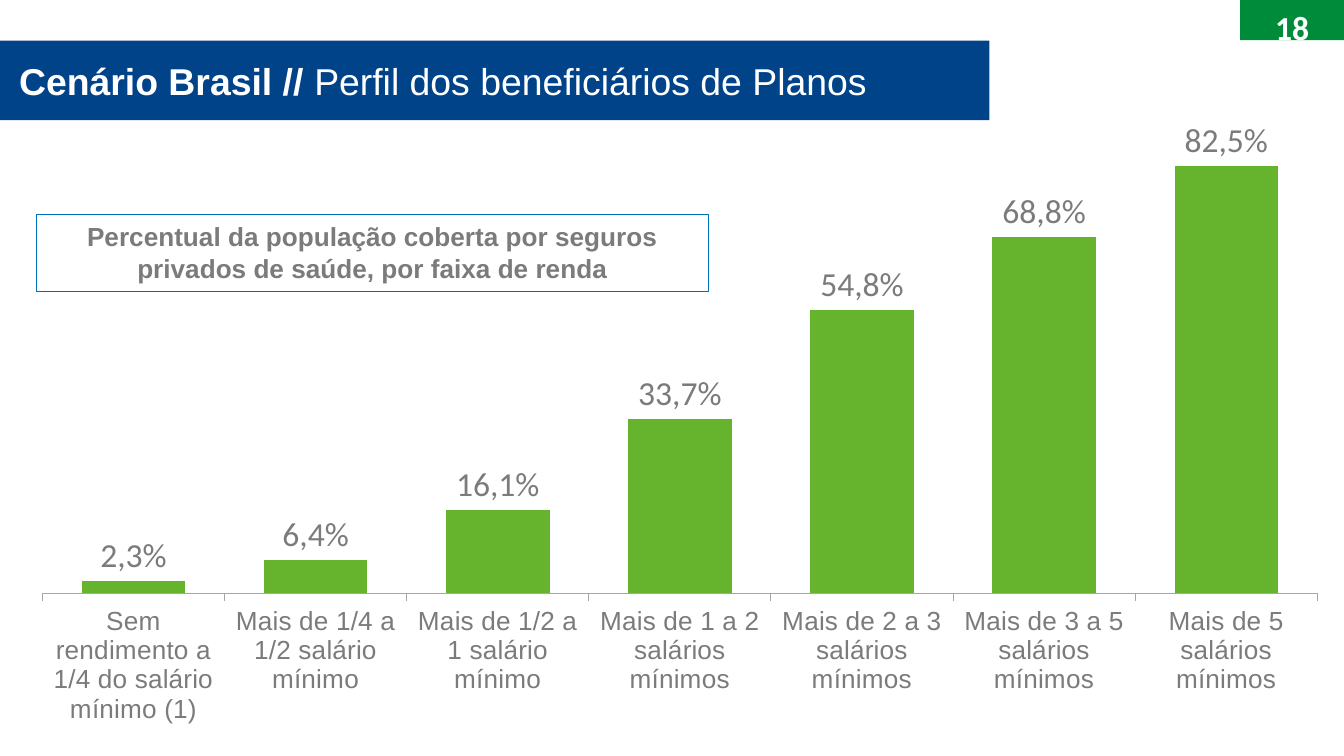
from pptx import Presentation
from pptx.chart.data import CategoryChartData
from pptx.dml.color import RGBColor
from pptx.enum.chart import XL_CHART_TYPE, XL_LABEL_POSITION, XL_TICK_LABEL_POSITION, XL_TICK_MARK
from pptx.enum.shapes import MSO_SHAPE
from pptx.enum.text import MSO_ANCHOR, PP_ALIGN
from pptx.oxml import parse_xml
from pptx.oxml.ns import nsdecls
from pptx.util import Cm, Pt

COLUMNS = XL_CHART_TYPE.COLUMN_CLUSTERED
OUTSIDE_END = XL_LABEL_POSITION.OUTSIDE_END
AXIS_LOW = XL_TICK_LABEL_POSITION.LOW
TICK_OUT = XL_TICK_MARK.OUTSIDE
RECTANGLE = MSO_SHAPE.RECTANGLE
TOP, MIDDLE = MSO_ANCHOR.TOP, MSO_ANCHOR.MIDDLE
LEFT, CENTER = PP_ALIGN.LEFT, PP_ALIGN.CENTER

# Content
PAGE_NUMBER = "18"
TITLE = [("Cenário Brasil // ", True), ("Perfil dos beneficiários de Planos", False)]
CAPTION = "Percentual da população coberta por seguros privados de saúde, por faixa de renda"
COVERAGE = [
    ("Sem rendimento a 1/4 do salário mínimo (1)", 2.3),
    ("Mais de 1/4 a 1/2 salário mínimo", 6.4),
    ("Mais de 1/2 a 1 salário mínimo", 16.1),
    ("Mais de 1 a 2 salários mínimos", 33.7),
    ("Mais de 2 a 3 salários mínimos", 54.8),
    ("Mais de 3 a 5 salários mínimos", 68.8),
    ("Mais de 5 salários mínimos", 82.5),
]

THEME = {
    "white": RGBColor(0xFF, 0xFF, 0xFF),
    "navy": RGBColor(0x00, 0x43, 0x89),
    "blue": RGBColor(0x00, 0x6F, 0xB9),
    "page_green": RGBColor(0x00, 0x8B, 0x3A),
    "bar_green": RGBColor(0x66, 0xB3, 0x2E),
    "grey": RGBColor(0x7B, 0x7B, 0x7B),
    "axis": RGBColor(0xA6, 0xA6, 0xA6),
    "heading_font": "Arial",
    "number_font": "Calibri",
    "title_size": Pt(20),
    "number_size": Pt(18),
    "text_size": Pt(14),
}

# Left, top, width, height in centimetres
PAGE_BOX = (23.44, 0, 1.96, 0.76)
CHART_BOX = (0.3, 2.18, 25.1, 11.73)
TITLE_BOX = (-0.02, 0.77, 18.72, 1.5)
CAPTION_BOX = (0.69, 4.05, 12.7, 1.46)
PLOT_LAYOUT = {"x": 0.02, "y": 0.02, "w": 0.96, "h": 0.75}


def place(box):
    return [Cm(length) for length in box]


def style(font, family, size, color, bold=False):
    font.name, font.size, font.bold = family, size, bold
    font.color.rgb = color


def add_box(slide, box, text, family, size, color):
    shape = slide.shapes.add_shape(RECTANGLE, *place(box))
    shape.shadow.inherit = False
    shape.fill.background()
    shape.line.fill.background()
    frame = shape.text_frame
    frame.text = text
    frame.word_wrap = True
    frame.vertical_anchor = TOP
    frame.paragraphs[0].alignment = CENTER
    style(frame.paragraphs[0].runs[0].font, family, size, color, True)
    return shape


def add_title(slide):
    title = slide.shapes.title
    title.left, title.top, title.width, title.height = place(TITLE_BOX)
    title.fill.solid()
    title.fill.fore_color.rgb = THEME["navy"]
    frame = title.text_frame
    frame.word_wrap = True
    frame.vertical_anchor = MIDDLE
    frame.margin_left = Cm(0.38)
    frame.margin_top = frame.margin_bottom = Cm(0.1)
    heading = frame.paragraphs[0]
    heading.alignment = LEFT
    for text, bold in TITLE:
        part = heading.add_run()
        part.text = text
        style(part.font, THEME["heading_font"], THEME["title_size"], THEME["white"], bold)


def add_coverage_chart(slide):
    chart_data = CategoryChartData(number_format="0.0")
    chart_data.categories = [income for income, _ in COVERAGE]
    chart_data.add_series("Series 1", [share for _, share in COVERAGE])
    chart = slide.shapes.add_chart(COLUMNS, *place(CHART_BOX), chart_data).chart
    chart.has_legend = chart.has_title = False
    style(chart.font, THEME["number_font"], THEME["number_size"], THEME["grey"])

    # Axes
    shares = chart.value_axis
    shares.minimum_scale, shares.maximum_scale = 0, 90
    shares.has_major_gridlines = False
    shares.visible = False
    incomes = chart.category_axis
    incomes.major_tick_mark = TICK_OUT
    incomes.tick_label_position = AXIS_LOW
    incomes.format.line.color.rgb = THEME["axis"]
    incomes.format.line.width = Pt(0.5)
    style(incomes.tick_labels.font, THEME["heading_font"], THEME["text_size"], THEME["grey"])

    # Bars, labelled with decimal commas
    plot = chart.plots[0]
    plot.gap_width = 76
    plot.vary_by_categories = False
    bars = plot.series[0]
    bars.format.fill.solid()
    bars.format.fill.fore_color.rgb = THEME["bar_green"]
    labels = bars.data_labels
    labels.show_value = True
    labels.number_format = '0.0"%"'
    labels.number_format_is_linked = False
    labels.position = OUTSIDE_END
    style(labels.font, THEME["number_font"], THEME["number_size"], THEME["grey"])
    for index, (_, share) in enumerate(COVERAGE):
        label = bars.points[index].data_label
        label.text_frame.text = f"{share:.1f}%".replace(".", ",")
        label.position = OUTSIDE_END
        style(label.text_frame.paragraphs[0].runs[0].font,
              THEME["number_font"], THEME["number_size"], THEME["grey"])

    # Fixed inner plot area
    modes = "".join(f'<c:{side}Mode val="edge"/>' for side in "xy")
    sizes = "".join(f'<c:{side} val="{part}"/>' for side, part in PLOT_LAYOUT.items())
    layout = parse_xml(f'<c:layout {nsdecls("c")}><c:manualLayout><c:layoutTarget val="inner"/>'
                       f'{modes}{sizes}</c:manualLayout></c:layout>')
    plot_area = chart._chartSpace.chart.plotArea
    for automatic in plot_area.xpath("c:layout"):
        plot_area.remove(automatic)
    plot_area.insert(0, layout)


def main():
    prs = Presentation()
    prs.slide_width, prs.slide_height = Cm(25.4), Cm(14.29)
    slide = prs.slides.add_slide(prs.slide_layouts[5])

    add_title(slide)
    page = add_box(slide, PAGE_BOX, PAGE_NUMBER, THEME["number_font"],
                   THEME["number_size"], THEME["white"])
    page.fill.solid()
    page.fill.fore_color.rgb = THEME["page_green"]

    add_coverage_chart(slide)

    caption = add_box(slide, CAPTION_BOX, CAPTION, THEME["heading_font"],
                      THEME["text_size"], THEME["grey"])
    caption.line.color.rgb = THEME["blue"]
    caption.line.width = Pt(0.75)

    prs.save("out.pptx")


if __name__ == "__main__":
    main()
